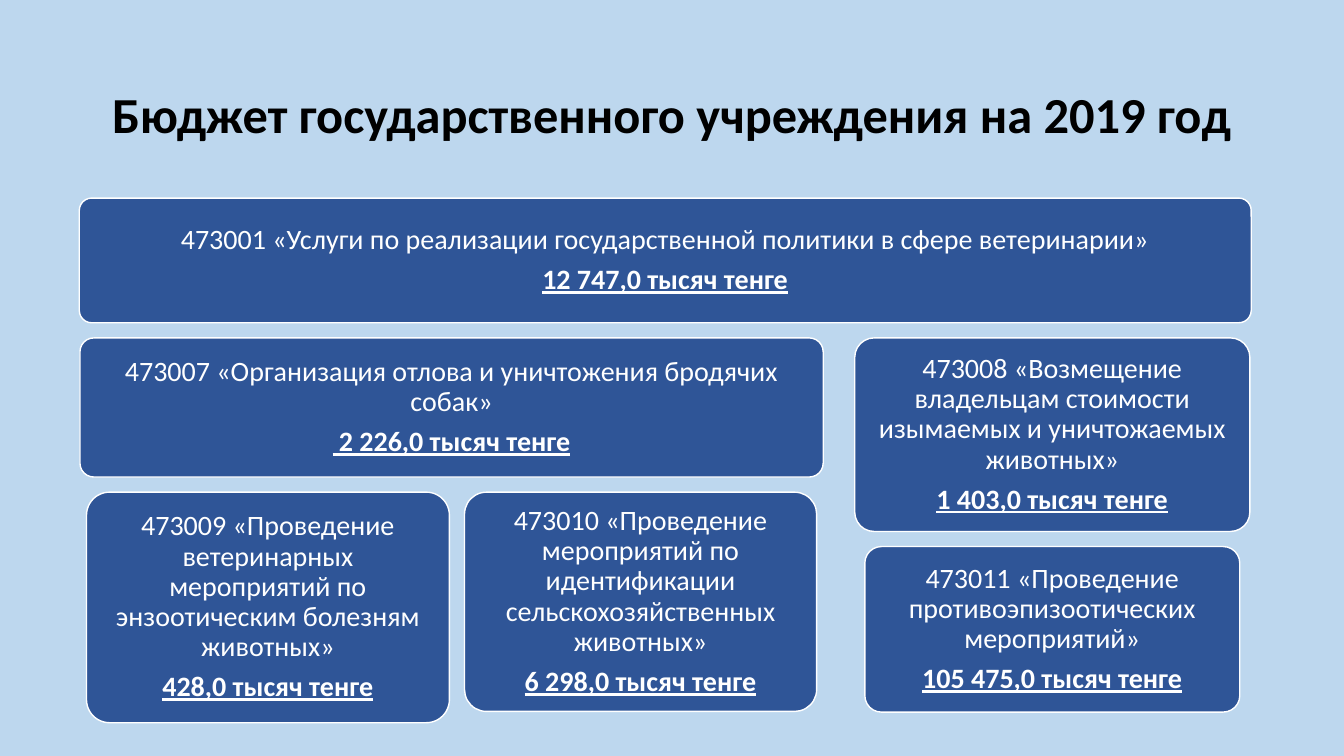
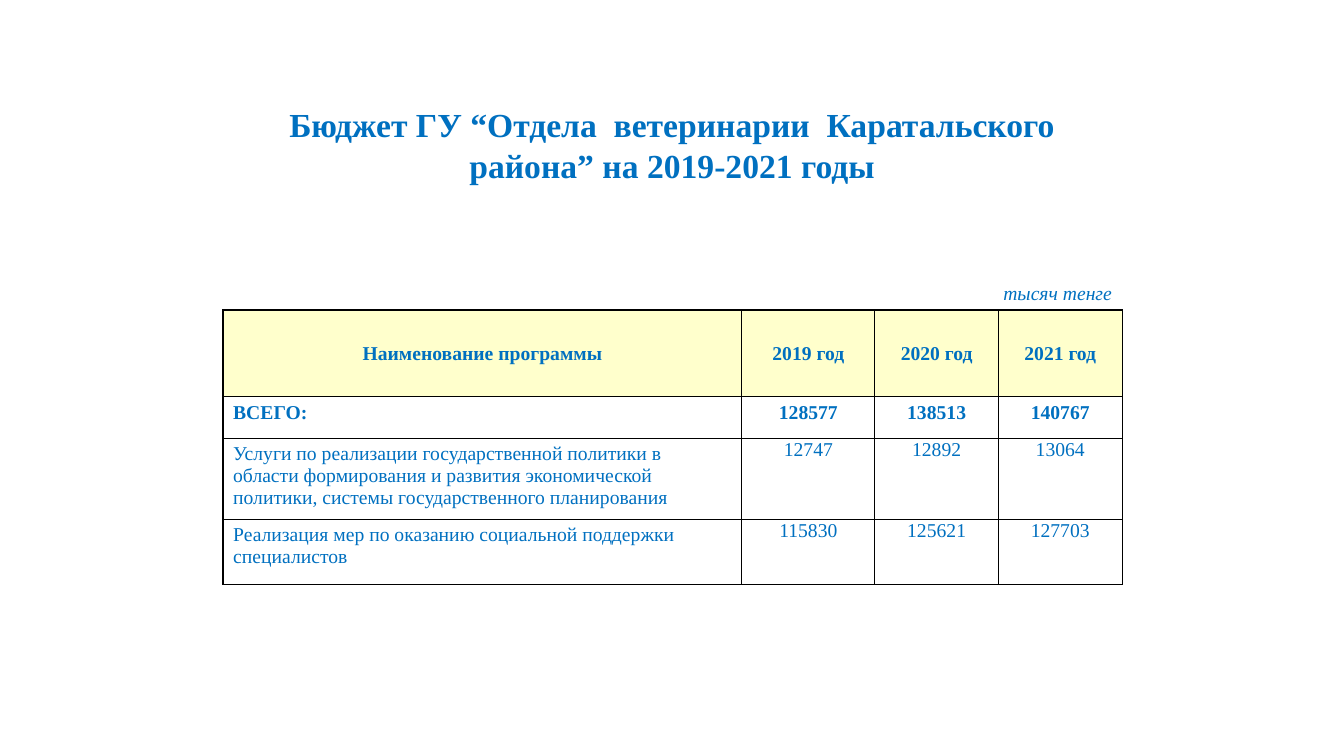
from lxml.etree import SubElement
from pptx import Presentation
from pptx.dml.color import RGBColor
from pptx.enum.shapes import MSO_SHAPE
from pptx.enum.text import MSO_ANCHOR, PP_ALIGN
from pptx.oxml import parse_xml
from pptx.oxml.ns import nsdecls, qn
from pptx.util import Inches, Pt

COLORS = {
    "sky": "BDD7EE", "white": "FFFFFF", "black": "000000",
    "navy": "2F5597", "blue": "0070C0", "cream": "FFFFCC",
}
SANS, SERIF = "Calibri", "Times New Roman"
GAP = 0.15  # inches between neighbouring tiles


def color(name):
    return RGBColor.from_string(COLORS[name])


class Deck:
    """Style and current slide; lengths are percent of the slide's size."""

    def __init__(self):
        self.prs = Presentation()
        self.prs.slide_width = Inches(13.33)
        self.prs.slide_height = Inches(7.5)
        self.gap_x = 100 * GAP / 13.33
        self.gap_y = 100 * GAP / 7.5

    def x(self, share):
        return round(self.prs.slide_width * share / 100)

    def y(self, share):
        return round(self.prs.slide_height * share / 100)

    def box(self, left, top, width, height):
        return self.x(left), self.y(top), self.x(width), self.y(height)

    def new_slide(self, background):
        self.s = self.prs.slides.add_slide(self.prs.slide_layouts[6])
        fill = self.s.background.fill
        fill.solid()
        fill.fore_color.rgb = color(background)

    def format(self, p, font, size, ink, align=PP_ALIGN.CENTER,
               bold=False, italic=False, underline=False):
        p.alignment = align
        for r in p.runs:
            f = r.font
            f.name, f.size, f.color.rgb = font, Pt(size), color(ink)
            f.bold, f.italic, f.underline = bold, italic, underline

    def title(self, text, place, font, size, ink, anchor):
        tf = self.s.shapes.add_textbox(*self.box(*place)).text_frame
        tf.word_wrap = True
        tf.vertical_anchor = anchor
        tf.text = text
        self.format(tf.paragraphs[0], font, size, ink, bold=True)

    def tile(self, place, program, amount):
        sp = self.s.shapes.add_shape(MSO_SHAPE.ROUNDED_RECTANGLE, *self.box(*place))
        sp.adjustments[0] = 0.1
        sp.shadow.inherit = False
        sp.fill.solid()
        sp.fill.fore_color.rgb = color("navy")
        sp.line.color.rgb = color("white")
        sp.line.width = Pt(1)
        tf = sp.text_frame
        tf.word_wrap = True
        tf.vertical_anchor = MSO_ANCHOR.MIDDLE
        tf.margin_left = tf.margin_right = tf.margin_top = tf.margin_bottom = Inches(0.08)
        tf.text = f"{program}\n{amount}"
        for p, strong in zip(tf.paragraphs, (False, True)):
            p.line_spacing = 0.9
            p.space_after = Pt(7)
            self.format(p, SANS, 20, "white", bold=strong, underline=strong)

    def tile_stack(self, center, top, rows):
        """Stack centred rows of (width, height, program, amount); return the next top."""
        for row in rows:
            left = center - (sum(t[0] for t in row) + self.gap_x * (len(row) - 1)) / 2
            for width, height, program, amount in row:
                self.tile((left, top, width, height), program, amount)
                left += width + self.gap_x
            top += max(t[1] for t in row) + self.gap_y
        return top

    def borders(self, cell, sides):
        """Draw black lines on the named sides (of LRTB) and clear the others."""
        tc_pr = cell._tc.get_or_add_tcPr()
        for i, side in enumerate("LRTB"):
            ln = parse_xml(f'<a:ln{side} {nsdecls("a")} w="12700"/>')
            if side in sides:
                solid = SubElement(ln, qn("a:solidFill"))
                SubElement(solid, qn("a:srgbClr"), val=COLORS["black"])
            else:
                SubElement(ln, qn("a:noFill"))
            tc_pr.insert(i, ln)

    def cell(self, cell, text, fill=None, anchor=MSO_ANCHOR.TOP, tight=False, **style):
        if fill:
            cell.fill.solid()
            cell.fill.fore_color.rgb = color(fill)
        else:
            cell.fill.background()
        self.borders(cell, "LRTB" if fill else "B")
        cell.vertical_anchor = anchor
        if tight:
            cell.margin_left = cell.margin_right = cell.margin_top = Inches(0.01)
            cell.margin_bottom = 0
        cell.text = text
        self.format(cell.text_frame.paragraphs[0], SERIF, 14, "blue", **style)

    def budget_table(self, left, top, widths, heights, unit, head, total, programs):
        rows = [["", "", unit, ""], head, total, *programs]
        place = self.box(left, top, sum(widths), sum(heights))
        table = self.s.shapes.add_table(len(rows), len(widths), *place).table
        table.first_row = table.horz_banding = False
        for column, width in zip(table.columns, widths):
            column.width = self.x(width)
        for row, height in zip(table.rows, heights):
            row.height = self.y(height)
        for i, values in enumerate(rows):
            for j, text in enumerate(values):
                cell = table.cell(i, j)
                if i == 0:
                    self.cell(cell, text, anchor=MSO_ANCHOR.BOTTOM,
                              align=PP_ALIGN.RIGHT, italic=True)
                elif i == 1:
                    self.cell(cell, text, "cream", MSO_ANCHOR.MIDDLE, bold=True)
                else:
                    align = PP_ALIGN.CENTER if j else PP_ALIGN.LEFT
                    self.cell(cell, text, "white", tight=i > 2 and j > 0,
                              align=align, bold=i == 2)
        table.cell(0, 2).merge(table.cell(0, 3))


def programs_slide(deck):
    deck.new_slide("sky")
    deck.title("Бюджет государственного учреждения на 2019 год",
               (6.9, 5.3, 86.2, 19.4), SANS, 36, "black", MSO_ANCHOR.MIDDLE)
    top = deck.tile_stack(49.5, 26.2, [
        [(87.2, 16.5, "473001 «Услуги по реализации государственной политики "
          "в сфере ветеринарии»", "12 747,0 тысяч тенге")],
    ])
    deck.tile_stack(33.6, top, [
        [(55.3, 18.4, "473007 «Организация отлова и уничтожения бродячих собак»",
          " 2 226,0 тысяч тенге")],
        [(27, 30.5, "473009 «Проведение ветеринарных мероприятий по "
          "энзоотическим болезням животных»", "428,0 тысяч тенге"),
         (26.2, 29, "473010 «Проведение мероприятий по идентификации "
          "сельскохозяйственных животных»", "6 298,0 тысяч тенге")],
    ])
    deck.tile_stack(78.3, top, [
        [(29.4, 25.6, "473008 «Возмещение владельцам стоимости изымаемых "
          "и уничтожаемых животных»", "1 403,0 тысяч тенге")],
        [(27.9, 21.9, "473011 «Проведение противоэпизоотических мероприятий»",
          "105 475,0 тысяч тенге")],
    ])


def years_slide(deck):
    deck.new_slide("white")
    deck.budget_table(
        16.6, 32.3, (38.6, 9.9, 9.2, 9.2), (8.7, 11.5, 5.5, 10.6, 8.7),
        unit="тысяч тенге",
        head=["Наименование программы", "2019 год", "2020 год", "2021 год"],
        total=["ВСЕГО:", "128577", "138513", "140767"],
        programs=[
            ["Услуги по реализации государственной политики в области формирования "
             "и развития экономической политики, системы государственного планирования",
             "12747", "12892", "13064"],
            ["Реализация мер по оказанию социальной поддержки специалистов",
             "115830", "125621", "127703"],
        ])
    deck.title("Бюджет ГУ “Отдела  ветеринарии  Каратальского\vрайона” на 2019-2021 годы",
               (16, 13.6, 68, 11.5), SERIF, 24, "blue", MSO_ANCHOR.BOTTOM)


def main():
    deck = Deck()
    programs_slide(deck)
    years_slide(deck)
    deck.prs.save("out.pptx")


if __name__ == "__main__":
    main()
